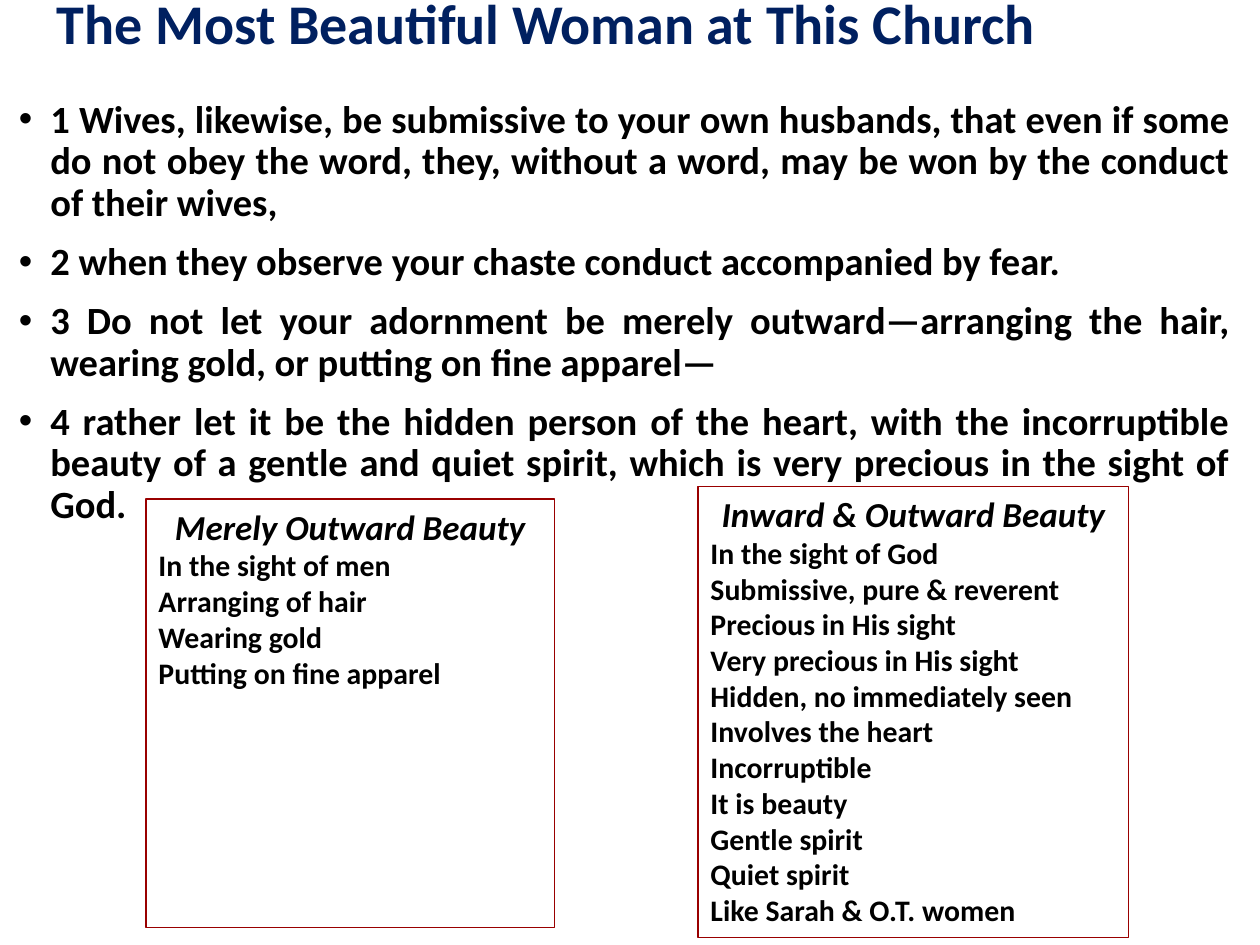
import pptx
import pptx.dml.color
import pptx.enum.shapes
import pptx.enum.text
import pptx.util

Pt = pptx.util.Pt
RGBColor = pptx.dml.color.RGBColor
Align = pptx.enum.text.PP_ALIGN
Anchor = pptx.enum.text.MSO_ANCHOR

NAVY = RGBColor(0x00, 0x20, 0x60)
BLACK = RGBColor(0x00, 0x00, 0x00)
WHITE = RGBColor(0xFF, 0xFF, 0xFF)
DARK_RED = RGBColor(0x99, 0x00, 0x00)
FONT = "Calibri"

TITLE = "The Most Beautiful Woman at This Church"
VERSE_GAP = " "  # one en space between verse number and text
VERSES = [
    (1, "Wives, likewise, be submissive to your own husbands, that even if some do not obey "
        "the word, they, without a word, may be won by the conduct of their wives,"),
    (2, "when they observe your chaste conduct accompanied by fear."),
    (3, "Do not let your adornment be merely outward—arranging the hair, wearing gold, "
        "or putting on fine apparel—"),
    (4, "rather let it be the hidden person of the heart, with the incorruptible beauty of "
        "a gentle and quiet spirit, which is very precious in the sight of God."),
]
# Heading, (left, top, width, height) in points, lines
BEAUTY_BOXES = [
    ("Merely Outward Beauty", (83.5, 285.1, 233.3, 244.8), [
        "In the sight of men",
        "Arranging of hair",
        "Wearing gold",
        "Putting on fine apparel",
    ]),
    ("Inward & Outward Beauty", (398.9, 277.9, 246.2, 257.8), [
        "In the sight of God",
        "Submissive, pure & reverent",
        "Precious in His sight",
        "Very precious in His sight",
        "Hidden, no immediately seen",
        "Involves the heart",
        "Incorruptible",
        "It is beauty",
        "Gentle spirit",
        "Quiet spirit",
        "Like Sarah & O.T. women",
    ]),
]


def place(shape, left, top, width, height):
    shape.left, shape.top = Pt(left), Pt(top)
    shape.width, shape.height = Pt(width), Pt(height)


def write(frame, text, size, first=False, color=BLACK, italic=False,
          align=Align.LEFT, line_spacing=1.0, space_before=0, hanging=None):
    """Write one paragraph; the first one reuses the frame's own paragraph."""
    paragraph = frame.paragraphs[0] if first else frame.add_paragraph()
    paragraph.alignment = align
    paragraph.line_spacing = line_spacing
    paragraph.space_before = Pt(0 if first else space_before)
    if hanging is not None:
        properties = paragraph._p.get_or_add_pPr()
        properties.set("marL", str(Pt(hanging)))
        properties.set("indent", str(-Pt(hanging)))
    run = paragraph.add_run()
    run.text = text
    run.font.name = FONT
    run.font.size = Pt(size)
    run.font.bold = True
    run.font.italic = italic
    run.font.color.rgb = color


def add_title(slide):
    title = slide.shapes.title
    place(title, 25.2, 0, 684.7, 61.2)
    frame = title.text_frame
    frame.auto_size = pptx.enum.text.MSO_AUTO_SIZE.NONE
    frame.vertical_anchor = Anchor.MIDDLE
    frame.margin_top, frame.margin_bottom = Pt(0), Pt(31)
    write(frame, TITLE, 32, first=True, color=NAVY, line_spacing=0.9)


def add_verses(slide):
    body = slide.placeholders[1]
    place(body, 3.6, 38.2, 706.3, 514.8)
    frame = body.text_frame
    frame.auto_size = pptx.enum.text.MSO_AUTO_SIZE.NONE
    frame.vertical_anchor = Anchor.TOP
    frame.margin_top = Pt(19)
    for index, (number, verse) in enumerate(VERSES):
        write(frame, f"{number}{VERSE_GAP}{verse}", 22, first=index == 0,
              align=Align.JUSTIFY, line_spacing=0.9, space_before=10, hanging=18)


def add_beauty_box(slide, heading, bounds, lines):
    box = slide.shapes.add_shape(pptx.enum.shapes.MSO_SHAPE.RECTANGLE,
                                 *(Pt(length) for length in bounds))
    box.shadow.inherit = False
    box.fill.solid()
    box.fill.fore_color.rgb = WHITE
    box.line.color.rgb = DARK_RED
    box.line.width = Pt(0.75)
    frame = box.text_frame
    frame.word_wrap = True
    frame.vertical_anchor = Anchor.TOP
    write(frame, heading, 20, first=True, italic=True, align=Align.CENTER)
    for line in lines:
        write(frame, line, 17)


def main():
    presentation = pptx.Presentation()
    presentation.slide_width, presentation.slide_height = Pt(720), Pt(540)
    slide = presentation.slides.add_slide(presentation.slide_layouts.get_by_name("Title and Content"))
    add_title(slide)
    add_verses(slide)
    for heading, bounds, lines in BEAUTY_BOXES:
        add_beauty_box(slide, heading, bounds, lines)
    presentation.save("out.pptx")


if __name__ == "__main__":
    main()
